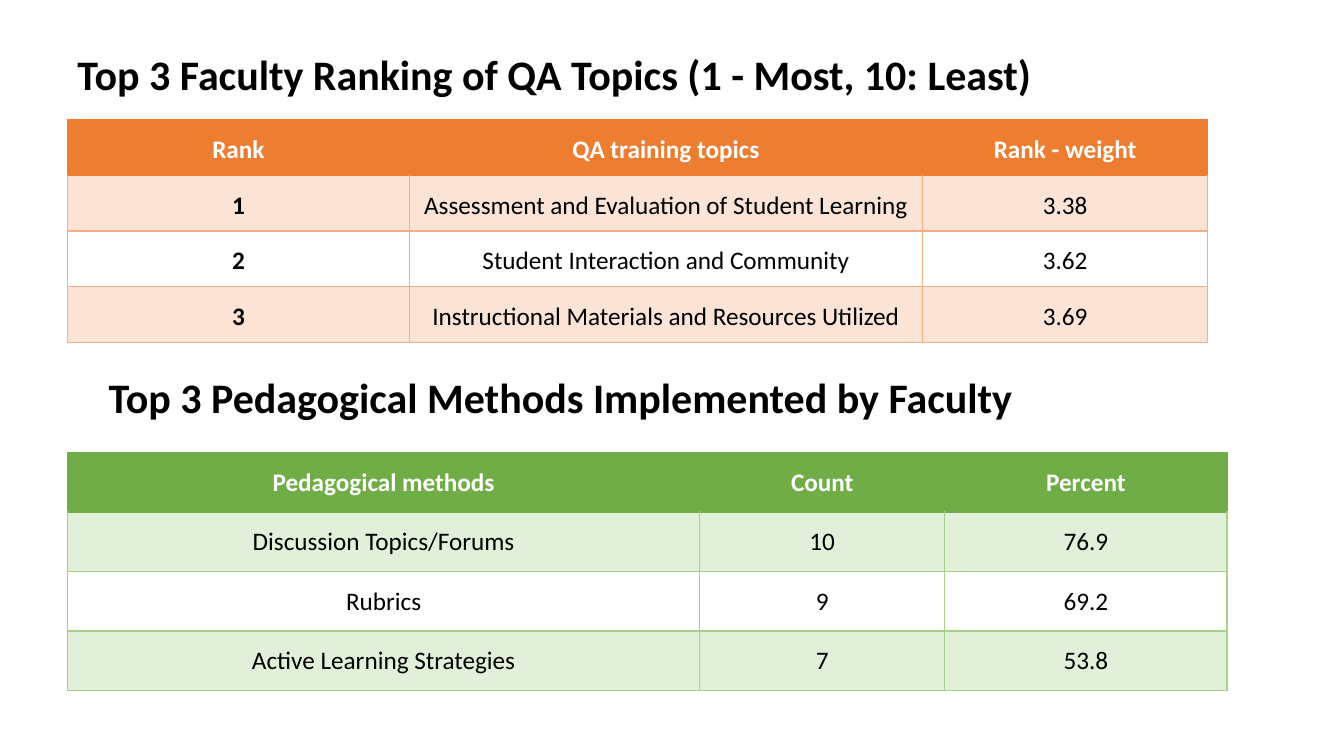
import pptx
import pptx.util
import pptx.dml.color
import pptx.enum.text
import pptx.oxml
import pptx.oxml.ns

Inches = pptx.util.Inches
Pt = pptx.util.Pt
Color = pptx.dml.color.RGBColor.from_string
Align = pptx.enum.text.PP_ALIGN
Anchor = pptx.enum.text.MSO_ANCHOR

theme = {
    "font": "Calibri", "title": 30, "cell": 18,
    "text": "000000", "head": "FFFFFF",
    "orange": {"main": "ED7D31", "line": "F4B083", "band": "FBE4D5"},
    "green": {"main": "70AD47", "line": "A8D08D", "band": "E2EFD9"},
}

titles = [
    ("Top 3 Faculty Ranking of QA Topics (1 - Most, 10: Least)", 0.67, 0.31, 11.5, 1.45),
    ("Top 3 Pedagogical Methods Implemented by Faculty", 0.98, 3.67, 9.84, 1.15),
]

tables = [
    {"hue": "orange", "top": 1.19, "high": 0.55, "cols": [3.39, 5.09, 2.83], "bold": True,
     "rows": [
         ["Rank", "QA training topics", "Rank - weight"],
         ["1", "Assessment and Evaluation of Student Learning", "3.38"],
         ["2", "Student Interaction and Community", "3.62"],
         ["3", "Instructional Materials and Resources Utilized", "3.69"],
     ]},
    {"hue": "green", "top": 4.49, "high": 0.59, "cols": [6.27, 2.43, 2.8], "bold": False,
     "rows": [
         ["Pedagogical methods", "Count", "Percent"],
         ["Discussion Topics/Forums", "10", "76.9"],
         ["Rubrics", "9", "69.2"],
         ["Active Learning Strategies", "7", "53.8"],
     ]},
]


def style(para, size, color, bold, space):
    para.line_spacing = space
    font = para.runs[0].font
    font.name = theme["font"]
    font.size = Pt(size)
    font.bold = bold
    font.color.rgb = Color(color)


def border(cell, sides):
    props = cell._tc.get_or_add_tcPr()
    for spot, (side, color) in enumerate(sides.items()):
        fill = f'<a:solidFill><a:srgbClr val="{color}"/></a:solidFill>' if color else "<a:noFill/>"
        space = pptx.oxml.ns.nsdecls("a")
        line = pptx.oxml.parse_xml(f'<a:ln{side} {space} w="{Pt(1)}">{fill}</a:ln{side}>')
        props.insert(spot, line)


deck = pptx.Presentation()
deck.slide_width = Inches(13.33)
deck.slide_height = Inches(7.5)
slide = deck.slides.add_slide(deck.slide_layouts[6])

for data in tables:
    hue = theme[data["hue"]]
    rows, cols = data["rows"], data["cols"]
    frame = slide.shapes.add_table(
        len(rows), len(cols), Inches(0.67), Inches(data["top"]),
        Inches(sum(cols)), Inches(data["high"] * len(rows)))
    table = frame.table
    table.first_row = False
    table.horz_banding = False
    for col, width in zip(table.columns, cols):
        col.width = Inches(width)
    for r, row in enumerate(rows):
        table.rows[r].height = Inches(data["high"])
        for c, text in enumerate(row):
            cell = table.cell(r, c)
            cell.margin_left = cell.margin_right = Inches(0.07)
            cell.margin_top = cell.margin_bottom = Inches(0.1)
            cell.text_frame.text = text
            para = cell.text_frame.paragraphs[0]
            para.alignment = Align.CENTER
            head = r == 0
            bold = head or (data["bold"] and c == 0)
            style(para, theme["cell"], theme["head" if head else "text"], bold, 1.15)
            if r % 2 or head:
                cell.fill.solid()
                cell.fill.fore_color.rgb = Color(hue["main" if head else "band"])
            else:
                cell.fill.background()
            main, line = hue["main"], hue["line"]
            if head:
                left = main if c == 0 else None
                right = main if c == len(cols) - 1 else None
                sides = {"L": left, "R": right, "T": main, "B": main}
            else:
                sides = {"L": line, "R": line, "T": main if r == 1 else line, "B": line}
            border(cell, sides)

for text, left, top, width, height in titles:
    box = slide.shapes.add_textbox(Inches(left), Inches(top), Inches(width), Inches(height))
    frame = box.text_frame
    frame.word_wrap = True
    frame.vertical_anchor = Anchor.MIDDLE
    frame.margin_bottom = Inches(0.6)
    frame.text = text
    style(frame.paragraphs[0], theme["title"], theme["text"], True, 0.9)

deck.save("out.pptx")
